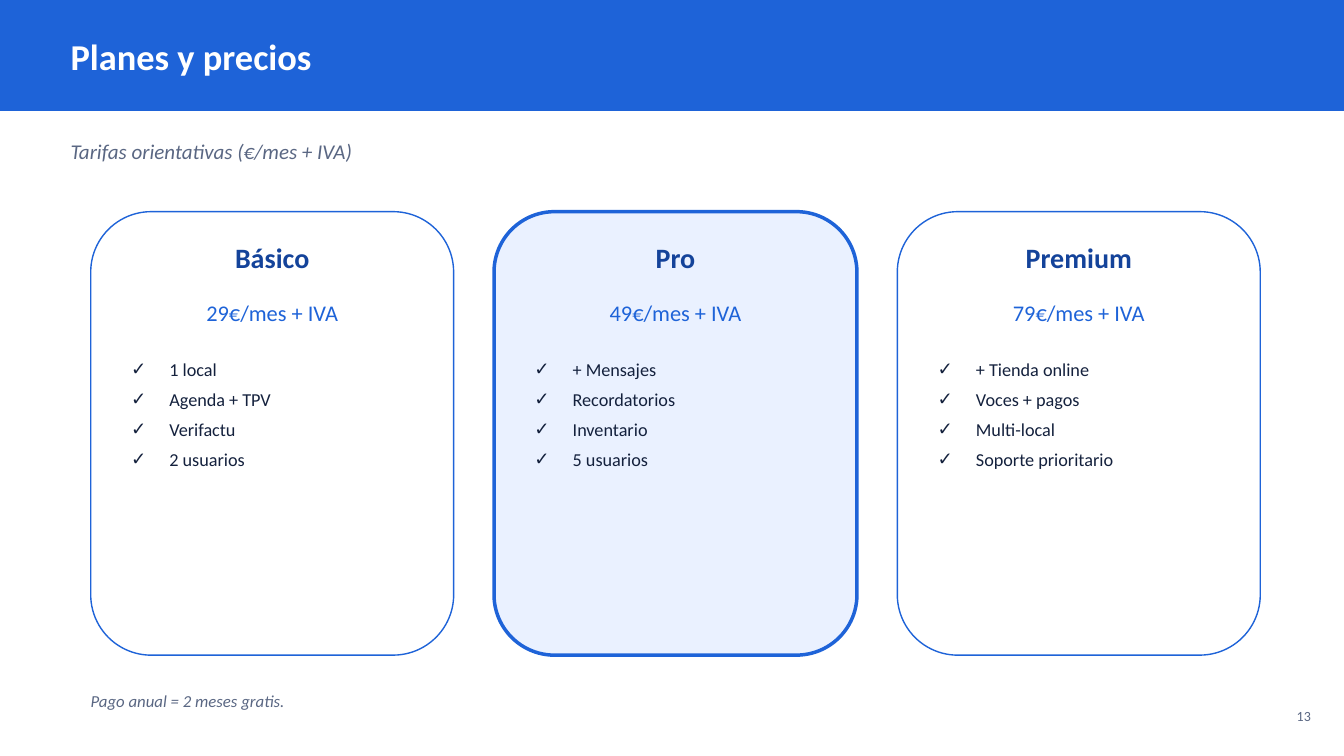
from pptx import Presentation, util as u
from pptx.dml.color import RGBColor
from pptx.enum import shapes, text
from lxml import etree

HUES = {"blue": "1E63D8", "navy": "14439A", "ink": "14213D",
        "grey": "5A6783", "pale": "EAF1FF", "white": "FFFFFF"}
RGB = {name: RGBColor.from_string(code) for name, code in HUES.items()}
CELL = u.Inches(0.1)  # grid step for all columns and rows
NS = "{http://schemas.openxmlformats.org/drawingml/2006/main}"
LEFT, MID, RIGHT = text.PP_ALIGN.LEFT, text.PP_ALIGN.CENTER, text.PP_ALIGN.RIGHT

deck = Presentation()
deck.slide_width, deck.slide_height = u.Inches(13.33), u.Inches(7.5)
slide = deck.slides.add_slide(deck.slide_layouts.get_by_name("Comparison"))
tree = slide.shapes
title, intro, *lists = slide.placeholders


def write(box, grid, lines, size, hue, align=LEFT, bold=False, slant=False, mark=None):
    """Place a box on the grid and fill it, with bullets if a mark is given."""
    box.left, box.top, box.width, box.height = [int(n * CELL) for n in grid]
    frame = box.text_frame
    frame.word_wrap = True
    frame.auto_size = text.MSO_AUTO_SIZE.NONE
    frame.vertical_anchor = text.MSO_ANCHOR.TOP if mark else text.MSO_ANCHOR.MIDDLE
    for row, line in enumerate(lines):
        para = frame.add_paragraph() if row else frame.paragraphs[0]
        para.alignment = align
        para.space_before = u.Pt(0)
        if mark:
            para.space_after = u.Pt(6)
            props = para._p.get_or_add_pPr()
            props.set("marL", str(u.Inches(0.38)))
            props.set("indent", str(-u.Inches(0.38)))
            etree.SubElement(props, NS + "buChar", char=mark)
        run = para.add_run()
        run.text = line
        font = run.font
        font.name, font.size = "Calibri", u.Pt(size)
        font.bold, font.italic = bold, slant
        font.color.rgb = RGB[hue]


def panel(kind, grid, fill, line=0):
    """Draw a filled shape behind the text."""
    shape = tree.add_shape(kind, *[int(n * CELL) for n in grid])
    shape.shadow.inherit = False
    shape.fill.solid()
    shape.fill.fore_color.rgb = RGB[fill]
    if line:
        shape.line.color.rgb = RGB["blue"]
        shape.line.width = u.Pt(line)
    else:
        shape.line.fill.background()
    tree._spTree.insert(2, shape._element)


# Header
panel(shapes.MSO_SHAPE.RECTANGLE, (0, 0, 133.3, 11), "blue")
write(title, (6, 1.8, 121, 7.5), ["Planes y precios"], 26, "white", bold=True)
write(intro, (6, 12.5, 121, 5), ["Tarifas orientativas (€/mes + IVA)"], 15, "grey", slant=True)

# Plan cards
plans = [
    ("Básico", 29, "white", 1, ["1 local", "Agenda + TPV", "Verifactu", "2 usuarios"]),
    ("Pro", 49, "pale", 2.5, ["+ Mensajes", "Recordatorios", "Inventario", "5 usuarios"]),
    ("Premium", 79, "white", 1,
     ["+ Tienda online", "Voces + pagos", "Multi-local", "Soporte prioritario"]),
]
for col, (plan, price, fill, line, perks) in enumerate(plans):
    x = 9 + 40 * col
    panel(shapes.MSO_SHAPE.ROUNDED_RECTANGLE, (x, 21, 36, 44), fill, line)
    write(tree.add_textbox(0, 0, 0, 0), (x, 23, 36, 5), [plan], 20, "navy", MID, bold=True)
    write(tree.add_textbox(0, 0, 0, 0), (x, 28.5, 36, 5), [f"{price}€/mes + IVA"], 16, "blue", MID)
    write(lists[col], (x + 3, 35, 30, 27), perks, 13, "ink", mark="✓")

# Footer
write(tree.add_textbox(0, 0, 0, 0), (8, 67, 117, 5), ["Pago anual = 2 meses gratis."],
      12, "grey", slant=True)
write(tree.add_textbox(0, 0, 0, 0), (125, 69, 6, 4), ["13"], 10, "grey", RIGHT)

deck.save("out.pptx")
